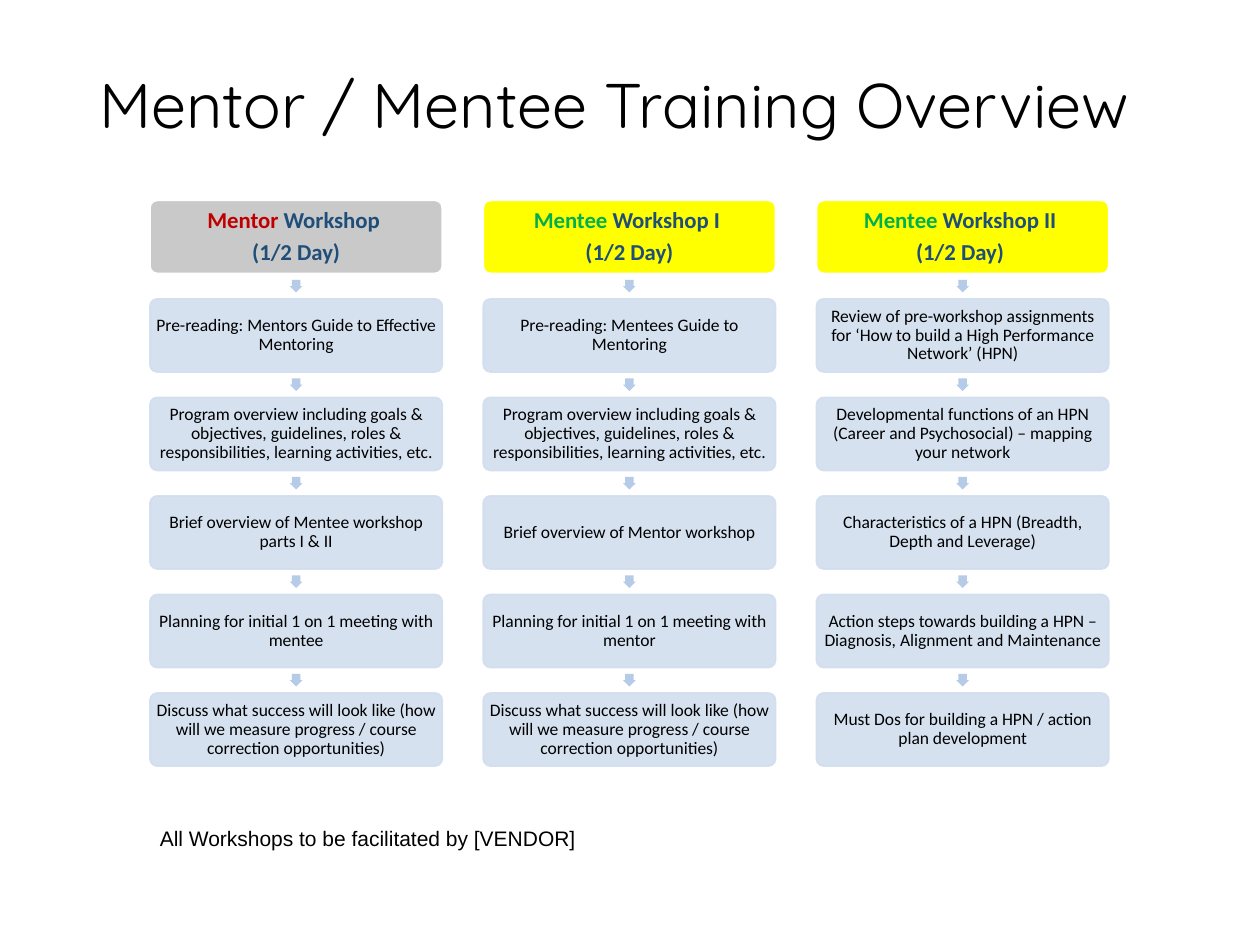
from lxml.etree import SubElement
from pptx import Presentation
from pptx.dml.color import RGBColor
from pptx.enum.shapes import MSO_SHAPE as Shape
from pptx.enum.text import MSO_ANCHOR as Anchor, PP_ALIGN as Align
from pptx.oxml.ns import qn
from pptx.util import Inches, Pt

BLACK = RGBColor(0x00, 0x00, 0x00)
WHITE = RGBColor(0xFF, 0xFF, 0xFF)
GREY = RGBColor(0xC9, 0xC9, 0xC9)
YELLOW = RGBColor(0xFF, 0xFF, 0x00)
RED = RGBColor(0xC0, 0x00, 0x00)
GREEN = RGBColor(0x00, 0xB0, 0x50)
NAVY = RGBColor(0x1F, 0x4E, 0x79)
PALE_BLUE = RGBColor(0xD2, 0xDE, 0xEF)
ARROW_BLUE = RGBColor(0xB5, 0xCB, 0xE7)

LEFT, TOP = 1.19, 1.59
BOX_W, BOX_H = 2.32, 0.58
COL_PITCH, ROW_PITCH = 5.29 / 2, 3.91 / 5
ARROW = 0.1

HEADER_FONT = {"name": "Calibri", "size": Pt(13), "bold": True}
STEP_FONT = {"name": "Calibri", "size": Pt(10)}
TITLE_FONT = {"name": "Quicksand", "size": Pt(36)}
NOTE_FONT = {"name": "Arial", "size": Pt(12)}

OVERVIEW = ("Program overview including goals & objectives, guidelines, "
            "roles & responsibilities, learning activities, etc.")
SUCCESS = ("Discuss what success will look like (how will we measure "
           "progress / course correction opportunities)")

WORKSHOPS = [
    (GREY, "Mentor", RED, " Workshop ", "(1/2 Day)", [
        "Pre-reading: Mentors Guide to Effective Mentoring",
        OVERVIEW,
        "Brief overview of Mentee workshop parts I & II",
        "Planning for initial 1 on 1 meeting with mentee",
        SUCCESS,
    ]),
    (YELLOW, "Mentee", GREEN, " Workshop I ", "(1/2 Day)", [
        "Pre-reading: Mentees Guide to Mentoring",
        OVERVIEW,
        "Brief overview of Mentor workshop",
        "Planning for initial 1 on 1 meeting with mentor",
        SUCCESS,
    ]),
    (YELLOW, "Mentee", GREEN, " Workshop II ", "(1/2 Day) ", [
        "Review of pre-workshop assignments for ‘How to build a High "
        "Performance Network’ (HPN)",
        "Developmental functions of an HPN (Career and Psychosocial) – "
        "mapping your network",
        "Characteristics of a HPN (Breadth, Depth and Leverage)",
        "Action steps towards building a HPN – Diagnosis, Alignment and "
        "Maintenance",
        "Must Dos for building a HPN / action plan development",
    ]),
]


def set_attrs(obj, values):
    for name, value in values.items():
        setattr(obj, name, value)


def write(tf, paragraphs, font, para_format):
    for i, runs in enumerate(paragraphs):
        p = tf.add_paragraph() if i else tf.paragraphs[0]
        set_attrs(p, para_format)
        for text, color in runs:
            r = p.add_run()
            r.text = text
            set_attrs(r.font, font)
            r.font.color.rgb = color


def add_text(s, x, y, w, h, text, font, anchor, para_format):
    tf = s.shapes.add_textbox(Inches(x), Inches(y), Inches(w), Inches(h)).text_frame
    set_attrs(tf, {"word_wrap": True, "vertical_anchor": anchor})
    write(tf, [[(text, BLACK)]], font, para_format)


def add_shape(s, kind, x, y, w, h, fill):
    sp = s.shapes.add_shape(kind, Inches(x), Inches(y), Inches(w), Inches(h))
    sp.shadow.inherit = False
    sp.fill.solid()
    sp.fill.fore_color.rgb = fill
    return sp


def add_box(s, x, y, fill, line, paragraphs, font, inset, space_after):
    sp = add_shape(s, Shape.ROUNDED_RECTANGLE, x, y, BOX_W, BOX_H, fill)
    sp.adjustments[0] = 0.1
    sp.line.color.rgb = line
    sp.line.width = Pt(1)
    tf = sp.text_frame
    margins = {f"margin_{side}": Inches(inset) for side in ("left", "top", "right", "bottom")}
    set_attrs(tf, {"word_wrap": True, "vertical_anchor": Anchor.MIDDLE, **margins})
    write(tf, paragraphs, font,
          {"alignment": Align.CENTER, "line_spacing": 0.9, "space_after": space_after})
    return sp


def make_translucent(sp, percent):
    for color in sp.element.spPr.iter(qn("a:srgbClr")):
        SubElement(color, qn("a:alpha")).set("val", str(percent * 1000))


def add_arrow(s, x, y):
    sp = add_shape(s, Shape.RIGHT_ARROW, x, y, ARROW, ARROW, ARROW_BLUE)
    sp.rotation = 90
    sp.adjustments[0] = 0.667
    sp.line.fill.background()


def add_workshop(s, x, fill, role, role_color, name, length, steps):
    heading = [[(role, role_color), (name, NAVY)], [(length, NAVY)]]
    add_box(s, x, TOP, fill, WHITE, heading, HEADER_FONT, 0.02, Pt(4.5))
    for row, step in enumerate(steps, 1):
        y = TOP + row * ROW_PITCH
        gap_middle = y - (ROW_PITCH - BOX_H) / 2
        add_arrow(s, x + (BOX_W - ARROW) / 2, gap_middle - ARROW / 2)
        sp = add_box(s, x, y, PALE_BLUE, PALE_BLUE, [[(step, BLACK)]],
                     STEP_FONT, 0.01, Pt(3.5))
        make_translucent(sp, 90)


def main():
    prs = Presentation()
    prs.slide_width, prs.slide_height = Inches(10), Inches(7.5)
    s = prs.slides.add_slide(prs.slide_layouts[6])
    add_text(s, 0.69, 0.13, 9.24, 1.45, "Mentor / Mentee Training Overview",
             TITLE_FONT, Anchor.MIDDLE, {"line_spacing": 0.9})
    for col, workshop in enumerate(WORKSHOPS):
        add_workshop(s, LEFT + col * COL_PITCH, *workshop)
    add_text(s, 1.17, 6.5, 5.5, 0.3, "All Workshops to be facilitated by [VENDOR]",
             NOTE_FONT, Anchor.TOP, {})
    prs.save("out.pptx")


if __name__ == "__main__":
    main()
